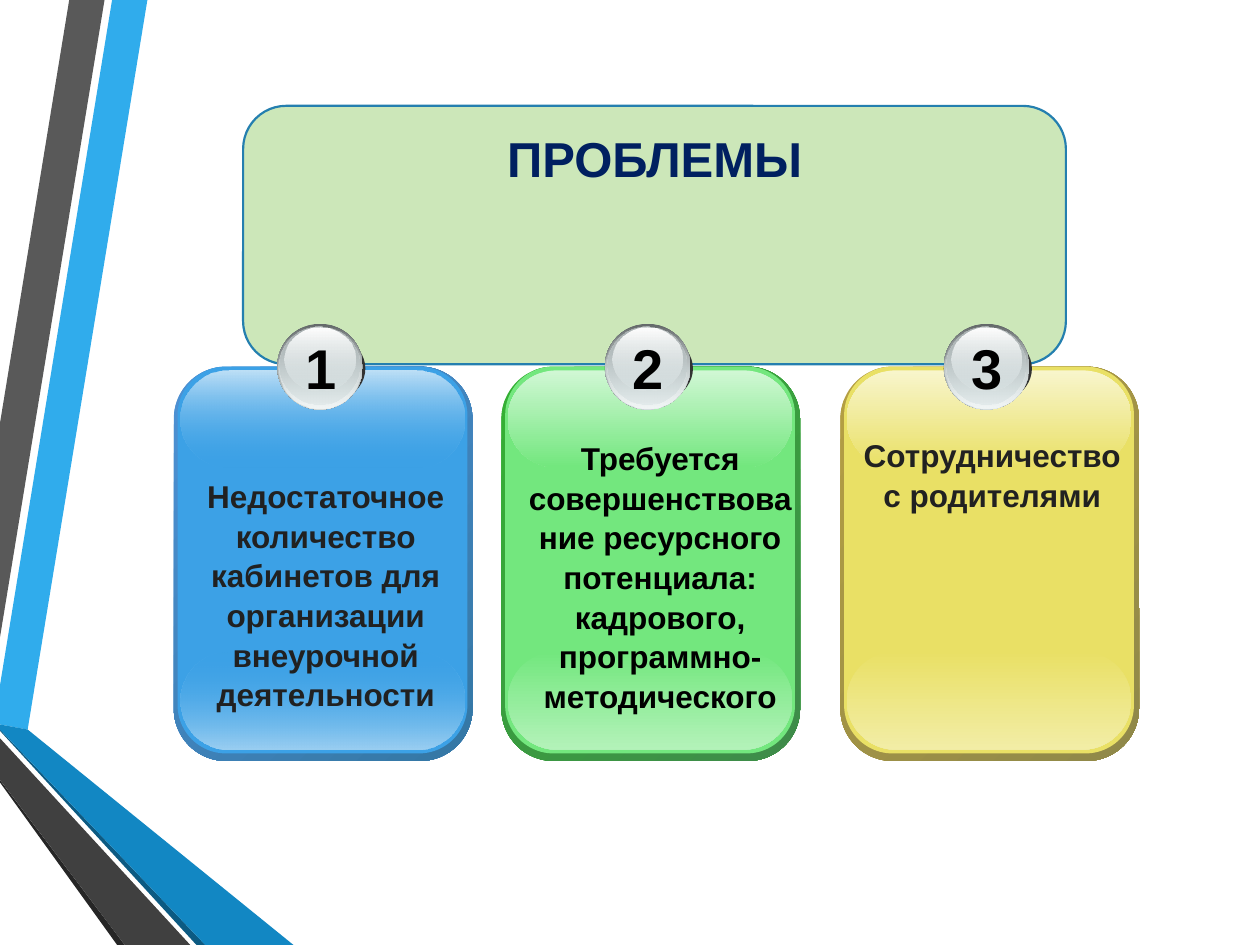
from lxml.etree import SubElement
from pptx import Presentation
from pptx.dml.color import RGBColor
from pptx.enum.shapes import MSO_SHAPE
from pptx.enum.text import MSO_ANCHOR, MSO_AUTO_SIZE, PP_ALIGN
from pptx.oxml.ns import qn
from pptx.util import Inches, Pt

COLORS = {
    "banner": "CCE7B9", "banner_line": "247FAF", "title": "002060",
    "black": "000000", "dark": "212121", "white": "FFFFFF",
    "ball_shadow": "333333", "ball_edge": "636869", "ball": "D6E1E2",
    "ball_light": "F1F5F5", "ball_shade": "AAB2B3",
}

RIBBONS = [
    ("30ACEC", [(0, 5.44), (0, 5.75), (0.22, 5.79), (1.17, 0), (0.89, 0)]),
    ("595959", [(0.83, 0), (0.55, 0), (0, 3.36), (0, 5.06)]),
    ("262626", [(0, 6.19), (0, 6.21), (0.93, 7.5), (0.99, 7.5)]),
    ("0C5A82", [(0, 5.79), (0, 5.8), (1.56, 7.5), (1.63, 7.5)]),
    ("1287C3", [(0, 5.79), (1.63, 7.5), (2.33, 7.5), (0.22, 5.79), (0, 5.75)]),
    ("404040", [(0, 6.19), (0.99, 7.5), (1.51, 7.5), (0, 5.86)]),
]

CARD_TOP = 2.91
CARDS = [
    {"left": 1.38, "edge": ("4E91D4", "3477A4"), "base": "3CA1E6",
     "top_gloss": "BEE0F7", "bottom_gloss": "9BCFF2", "fade": 0,
     "text": "Недостаточное количество кабинетов для организации внеурочной деятельности",
     "text_box": (0.08, 0.81, 2.25, 1.92), "text_color": "dark"},
    {"left": 3.98, "edge": ("34B034", "3F8B4A"), "base": "73E77E",
     "top_gloss": "D0F7D4", "bottom_gloss": "B3F2B9", "fade": 100,
     "text": "Требуется совершенствование ресурсного потенциала: кадрового, "
             "программно-методического",
     "text_box": (0.08, 0.51, 2.36, 2.22), "text_color": "black"},
    {"left": 6.67, "edge": ("B59F43", "8F8849"), "base": "E9E065",
     "top_gloss": "F8F5CC", "bottom_gloss": "F2EDA6", "fade": 100,
     "text": "Сотрудничество с родителями",
     "text_box": (0.08, 0.49, 2.25, 0.71), "text_color": "dark"},
]


def rgb(value):
    return RGBColor.from_string(COLORS.get(value, value))


def set_gradient(sp, stops, angle):
    """Fill a shape with (colour, opacity in percent) stops, evenly spread."""
    sp.fill.background()
    placeholder = sp._element.spPr.find(qn("a:noFill"))
    grad = placeholder.makeelement(qn("a:gradFill"), {"rotWithShape": "1"})
    placeholder.getparent().replace(placeholder, grad)
    gs_list = SubElement(grad, qn("a:gsLst"))
    for i, (color, opacity) in enumerate(stops):
        gs = SubElement(gs_list, qn("a:gs"), pos=str(i * 100000 // (len(stops) - 1)))
        clr = SubElement(gs, qn("a:srgbClr"), val=COLORS.get(color, color))
        if opacity < 100:
            SubElement(clr, qn("a:alpha"), val=str(opacity * 1000))
    SubElement(grad, qn("a:lin"), ang=str(angle * 60000), scaled="0")


def add_shape(s, kind, box, fill, angle=90, radius=None):
    """Add an unlined shape; fill is one colour or a list of gradient stops."""
    sp = s.shapes.add_shape(kind, *map(Inches, box))
    sp.shadow.inherit = False
    sp.line.fill.background()
    if radius is not None:
        sp.adjustments[0] = radius
    if isinstance(fill, str):
        sp.fill.solid()
        sp.fill.fore_color.rgb = rgb(fill)
    else:
        set_gradient(sp, fill, angle)
    return sp


def write(sp, text, size, color, **frame):
    tf = sp.text_frame
    frame = {"word_wrap": True, "auto_size": MSO_AUTO_SIZE.NONE, **frame}
    for name, value in frame.items():
        setattr(tf, name, value)
    p = tf.paragraphs[0]
    p.alignment = PP_ALIGN.CENTER
    p.line_spacing = 1.05
    r = p.add_run()
    r.text = text
    for name, value in {"name": "Arial", "size": Pt(size), "bold": True}.items():
        setattr(r.font, name, value)
    r.font.color.rgb = rgb(color)


def add_ribbons(s):
    for color, points in RIBBONS:
        start, *rest = [(Inches(x), Inches(y)) for x, y in points]
        builder = s.shapes.build_freeform(*start)
        builder.add_line_segments(rest, close=True)
        sp = builder.convert_to_shape()
        sp.shadow.inherit = False
        sp.line.fill.background()
        sp.fill.solid()
        sp.fill.fore_color.rgb = rgb(color)


def add_banner(s, left, top, width, height):
    banner = add_shape(s, MSO_SHAPE.ROUNDED_RECTANGLE, (left, top, width, height), "banner")
    banner.line.color.rgb = rgb("banner_line")
    banner.line.width = Pt(1.25)

    title = s.shapes.title
    title.left, title.top = Inches(left), Inches(top + 0.13)
    title.width, title.height = Inches(width), Inches(0.55)
    write(title, "ПРОБЛЕМЫ", 28, "title", vertical_anchor=MSO_ANCHOR.MIDDLE)
    banner._element.addnext(title._element)


def add_ball(s, left, top, number):
    layers = [
        ((0, 0.07, 0.7, 0.57), "ball_shadow"),
        ((0, 0, 0.68, 0.68), [("ball_edge", 100), ("ball", 100)]),
        ((0.01, 0.01, 0.66, 0.66), [("ball", 0), ("ball_light", 100)]),
        ((0.02, 0.02, 0.63, 0.62), [("ball_shade", 100), ("ball", 48)]),
        ((0.06, 0.03, 0.56, 0.5), [("white", 100), ("ball", 38)]),
    ]
    for (dx, dy, width, height), fill in layers:
        add_shape(s, MSO_SHAPE.OVAL, (left + dx, top + dy, width, height), fill)
    label = s.shapes.add_textbox(*map(Inches, (left + 0.12, top, 0.45, 0.64)))
    write(label, str(number), 32, "black", word_wrap=False)


def add_card(s, left, top, number, card):
    base, fade = card["base"], card["fade"]
    layers = [
        ((0, 0, 2.37, 3.13), [(c, 100) for c in card["edge"]], 45, 0.175),
        ((0.03, 0, 2.3, 3.07), base, 90, 0.167),
        ((0.05, 2.26, 2.26, 0.78), [(base, fade), (card["bottom_gloss"], 100)], 90, 0.5),
        ((0.05, 0.03, 2.26, 0.77), [(card["top_gloss"], 100), (base, fade)], 90, 0.5),
    ]
    for (dx, dy, width, height), fill, angle, radius in layers:
        add_shape(s, MSO_SHAPE.ROUNDED_RECTANGLE,
                  (left + dx, top + dy, width, height), fill, angle, radius)
    add_ball(s, left + 0.82, top - 0.34, number)
    dx, dy, width, height = card["text_box"]
    body = s.shapes.add_textbox(*map(Inches, (left + dx, top + dy, width, height)))
    write(body, card["text"], 18, card["text_color"])


def main():
    prs = Presentation()
    prs.slide_width, prs.slide_height = Inches(10), Inches(7.5)
    s = prs.slides.add_slide(prs.slide_layouts[5])
    add_ribbons(s)
    add_banner(s, 1.93, 0.84, 6.53, 2.05)
    for number, card in enumerate(CARDS, 1):
        add_card(s, card["left"], CARD_TOP, number, card)
    prs.save("out.pptx")


if __name__ == "__main__":
    main()
